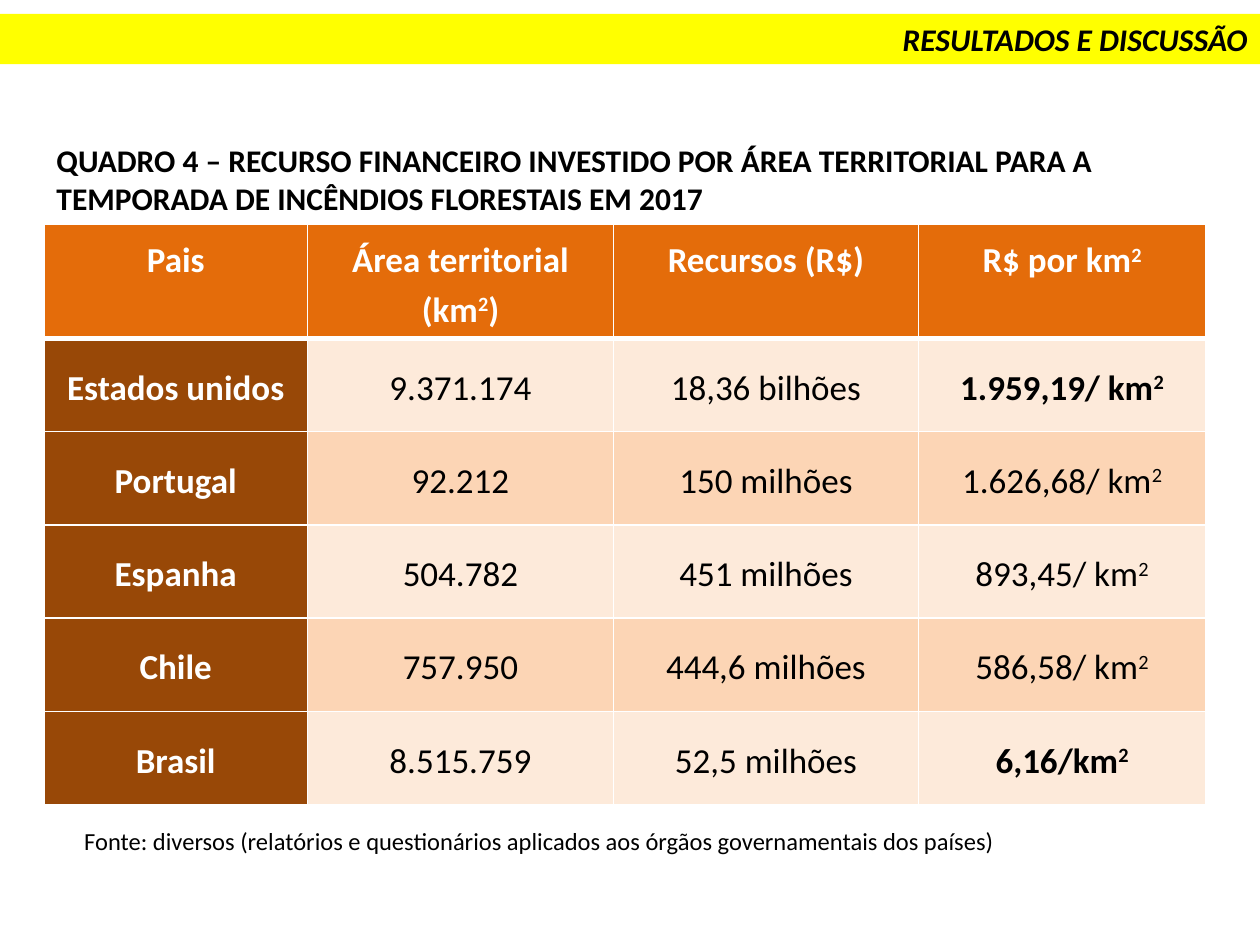
from dataclasses import dataclass

from lxml import etree
from pptx import Presentation
from pptx.dml.color import RGBColor
from pptx.enum.shapes import MSO_SHAPE
from pptx.enum.text import MSO_ANCHOR, PP_ALIGN
from pptx.oxml.ns import qn
from pptx.util import Inches, Pt

RECTANGLE = MSO_SHAPE.RECTANGLE
TOP, MIDDLE = MSO_ANCHOR.TOP, MSO_ANCHOR.MIDDLE
LEFT, CENTER, RIGHT = PP_ALIGN.LEFT, PP_ALIGN.CENTER, PP_ALIGN.RIGHT


@dataclass(frozen=True)
class Theme:
    font: str = "Calibri"
    black: str = "000000"
    white: str = "FFFFFF"
    banner: str = "FFFF00"
    header: str = "E46C0A"
    country: str = "984807"
    bands: tuple = ("FDEADA", "FCD5B5")
    title_size: int = 18
    table_size: int = 20
    source_size: int = 14


THEME = Theme()


def write(frame, text, size, color, bold=False, align=LEFT):
    """Fill the first paragraph; each ^2 becomes a superscript 2."""
    paragraph = frame.paragraphs[0]
    paragraph.alignment = align
    font = paragraph.font
    font.name, font.size, font.bold = THEME.font, Pt(size), bold
    font.color.rgb = RGBColor.from_string(color)
    for i, part in enumerate(text.split("^2")):
        if i:
            exponent = paragraph.add_run()
            exponent.text = "2"
            exponent._r.get_or_add_rPr().set("baseline", "30000")
        if part:
            paragraph.add_run().text = part
    return paragraph


def add_border(cell, side, width):
    line = etree.SubElement(cell._tc.get_or_add_tcPr(), qn(f"a:ln{side}"), w=str(Pt(width)))
    fill = etree.SubElement(line, qn("a:solidFill"))
    etree.SubElement(fill, qn("a:srgbClr"), val=THEME.white)


prs = Presentation()
prs.slide_width, prs.slide_height = Inches(10), Inches(7.5)
slide = prs.slides.add_slide(prs.slide_layouts[6])

# Section banner
banner = slide.shapes.add_shape(RECTANGLE, Inches(0), Inches(0.11), Inches(10), Inches(0.4))
banner.shadow.inherit = False
banner.fill.solid()
banner.fill.fore_color.rgb = RGBColor.from_string(THEME.banner)
banner.line.fill.background()
section = write(banner.text_frame, "RESULTADOS E DISCUSSÃO", THEME.title_size,
                THEME.black, bold=True, align=RIGHT)
section.font.italic = True

# Table title and source note
captions = [
    ("QUADRO 4 – RECURSO FINANCEIRO INVESTIDO POR ÁREA TERRITORIAL PARA A "
     "TEMPORADA DE INCÊNDIOS FLORESTAIS EM 2017",
     (0.35, 1.07, 9.37, 0.71), THEME.title_size, True),
    ("Fonte: diversos (relatórios e questionários aplicados aos órgãos "
     "governamentais dos países)",
     (0.57, 6.51, 8.86, 0.34), THEME.source_size, False),
]
for text, place, size, bold in captions:
    caption = slide.shapes.add_textbox(*map(Inches, place)).text_frame
    caption.word_wrap = True
    write(caption, text, size, THEME.black, bold)

# Spending per territorial area
rows = [
    ("Pais", "Área territorial (km^2)", "Recursos (R$)", "R$ por km^2"),
    ("Estados unidos", "9.371.174", "18,36 bilhões", "1.959,19/ km^2"),
    ("Portugal", "92.212", "150 milhões", "1.626,68/ km^2"),
    ("Espanha", "504.782", "451 milhões", "893,45/ km^2"),
    ("Chile", "757.950", "444,6 milhões", "586,58/ km^2"),
    ("Brasil", "8.515.759", "52,5 milhões", "6,16/km^2"),
]
column_widths = (2.09, 2.43, 2.42, 2.28)
row_height = 0.74
highlighted = {(1, 3), (5, 3)}  # highest and lowest spending

spending = slide.shapes.add_table(
    len(rows), len(column_widths), Inches(0.35), Inches(1.78),
    Inches(sum(column_widths)), Inches(row_height * len(rows))).table
spending.first_col = True
spending.horz_banding = False
for column, width in zip(spending.columns, column_widths):
    column.width = Inches(width)

for r, values in enumerate(rows):
    spending.rows[r].height = Inches(row_height)
    for c, value in enumerate(values):
        cell = spending.cell(r, c)
        is_heading = r == 0 or c == 0
        if r == 0:
            fill = THEME.header
        elif c == 0:
            fill = THEME.country
        else:
            fill = THEME.bands[(r - 1) % 2]
        for side in "LRTB":
            thick = (r, side) in ((0, "B"), (1, "T"))
            add_border(cell, side, 3 if thick else 1)
        cell.fill.solid()
        cell.fill.fore_color.rgb = RGBColor.from_string(fill)
        cell.margin_left = cell.margin_right = Inches(0.07)
        cell.margin_top = cell.margin_bottom = Inches(0.07)
        cell.vertical_anchor = MIDDLE if r else TOP
        entry = write(cell.text_frame, value, THEME.table_size,
                      THEME.white if is_heading else THEME.black,
                      bold=is_heading or (r, c) in highlighted, align=CENTER)
        entry.line_spacing = 1.15

prs.save("out.pptx")
